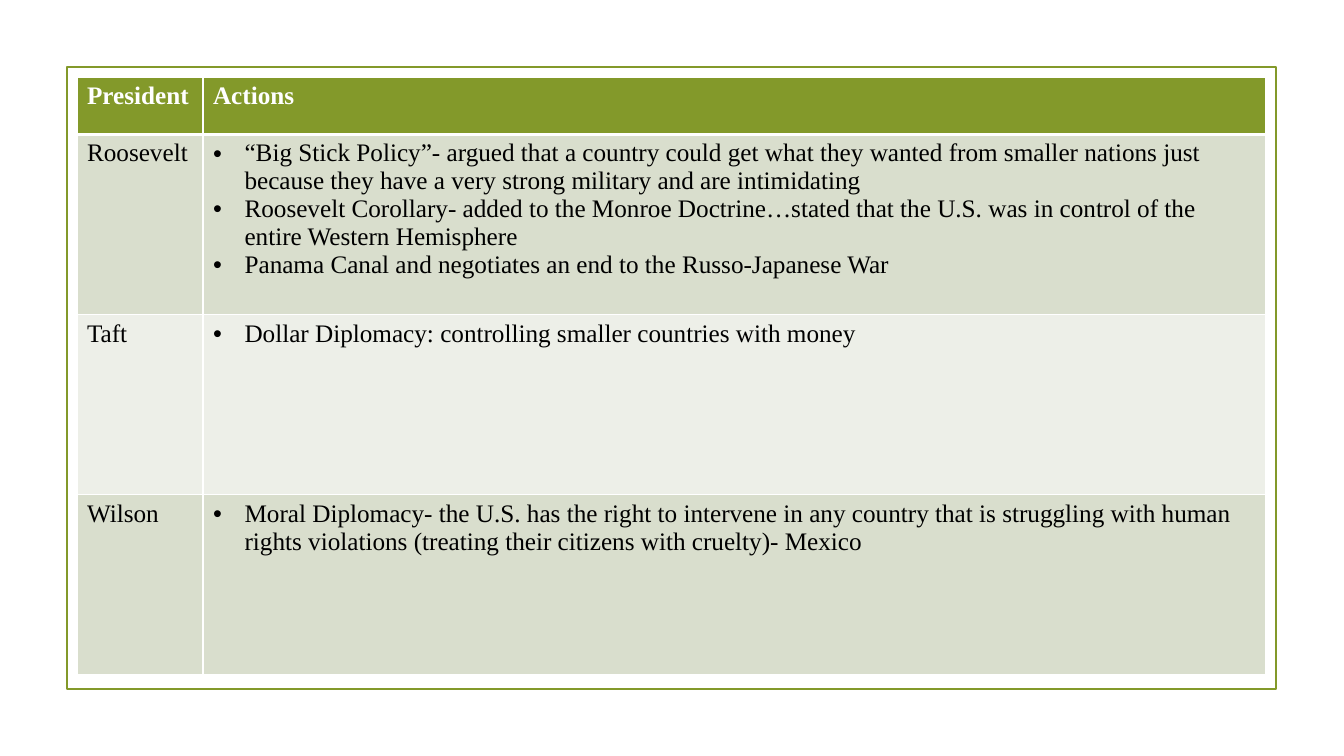
from dataclasses import dataclass

from lxml.etree import SubElement
from pptx import Presentation
from pptx.dml.color import RGBColor
from pptx.enum.shapes import MSO_SHAPE
from pptx.oxml.ns import qn
from pptx.util import Pt


@dataclass(frozen=True)
class Theme:
    font: str = "Times New Roman"
    size: int = 18
    green: str = "83992A"
    dark: str = "D9DECD"
    light: str = "EDEFE8"
    white: str = "FFFFFF"
    black: str = "000000"


THEME = Theme()
HEADS = ("President", "Actions")
ROWS = (
    ("Roosevelt", (
        "“Big Stick Policy”- argued that a country could get what they wanted "
        "from smaller nations just because they have a very strong military "
        "and are intimidating",
        "Roosevelt Corollary- added to the Monroe Doctrine…stated that the "
        "U.S. was in control of the entire Western Hemisphere",
        "Panama Canal and negotiates an end to the Russo-Japanese War",
    )),
    ("Taft", ("Dollar Diplomacy: controlling smaller countries with money",)),
    ("Wilson", (
        "Moral Diplomacy- the U.S. has the right to intervene in any country "
        "that is struggling with human rights violations (treating their "
        "citizens with cruelty)- Mexico",
    )),
)


def add_frame(slide):
    frame = slide.shapes.add_shape(
        MSO_SHAPE.RECTANGLE, Pt(47.7), Pt(48), Pt(864), Pt(444))
    frame.shadow.inherit = False
    frame.fill.background()
    frame.line.color.rgb = RGBColor.from_string(THEME.green)
    frame.line.width = Pt(1.25)


def add_bullet(para):
    props = para._p.get_or_add_pPr()
    props.set("marL", str(Pt(22.5)))
    props.set("indent", str(-Pt(22.5)))
    SubElement(props, qn("a:buFont"), typeface="Arial")
    SubElement(props, qn("a:buChar"), char="•")


def add_border(cell, top, bottom):
    props = cell._tc.get_or_add_tcPr()
    for side, width in (("L", 1), ("R", 1), ("T", top), ("B", bottom)):
        line = SubElement(props, qn(f"a:ln{side}"), w=str(Pt(width)))
        fill = SubElement(line, qn("a:solidFill"))
        SubElement(fill, qn("a:srgbClr"), val=THEME.white)


def fill_cell(cell, texts, back, color, bold=False, bullet=False):
    cell.fill.solid()
    cell.fill.fore_color.rgb = RGBColor.from_string(back)
    frame = cell.text_frame
    for index, text in enumerate(texts):
        para = frame.add_paragraph() if index else frame.paragraphs[0]
        if bullet:
            add_bullet(para)
        run = para.add_run()
        run.text = text
        run.font.name = THEME.font
        run.font.size = Pt(THEME.size)
        run.font.bold = bold
        run.font.color.rgb = RGBColor.from_string(color)


def add_grid(slide):
    widths, heights = (90, 759), (41,) + (128.7,) * len(ROWS)
    table = slide.shapes.add_table(
        len(heights), len(widths), Pt(55), Pt(55),
        Pt(sum(widths)), Pt(sum(heights))).table
    table.horz_banding = False
    for column, width in zip(table.columns, widths):
        column.width = Pt(width)
    for index, (row, height) in enumerate(zip(table.rows, heights)):
        row.height = Pt(height)
        for cell in row.cells:
            add_border(cell, 3 if index == 1 else 1, 1 if index else 3)
    for col, head in enumerate(HEADS):
        fill_cell(table.cell(0, col), [head], THEME.green, THEME.white, bold=True)
    for index, (name, actions) in enumerate(ROWS, 1):
        back = THEME.dark if index % 2 else THEME.light
        fill_cell(table.cell(index, 0), [name], back, THEME.black)
        fill_cell(table.cell(index, 1), actions, back, THEME.black, bullet=True)


def main():
    deck = Presentation()
    deck.slide_width, deck.slide_height = Pt(960), Pt(540)
    slide = deck.slides.add_slide(deck.slide_layouts.get_by_name("Blank"))
    add_frame(slide)
    add_grid(slide)
    deck.save("out.pptx")


if __name__ == "__main__":
    main()
